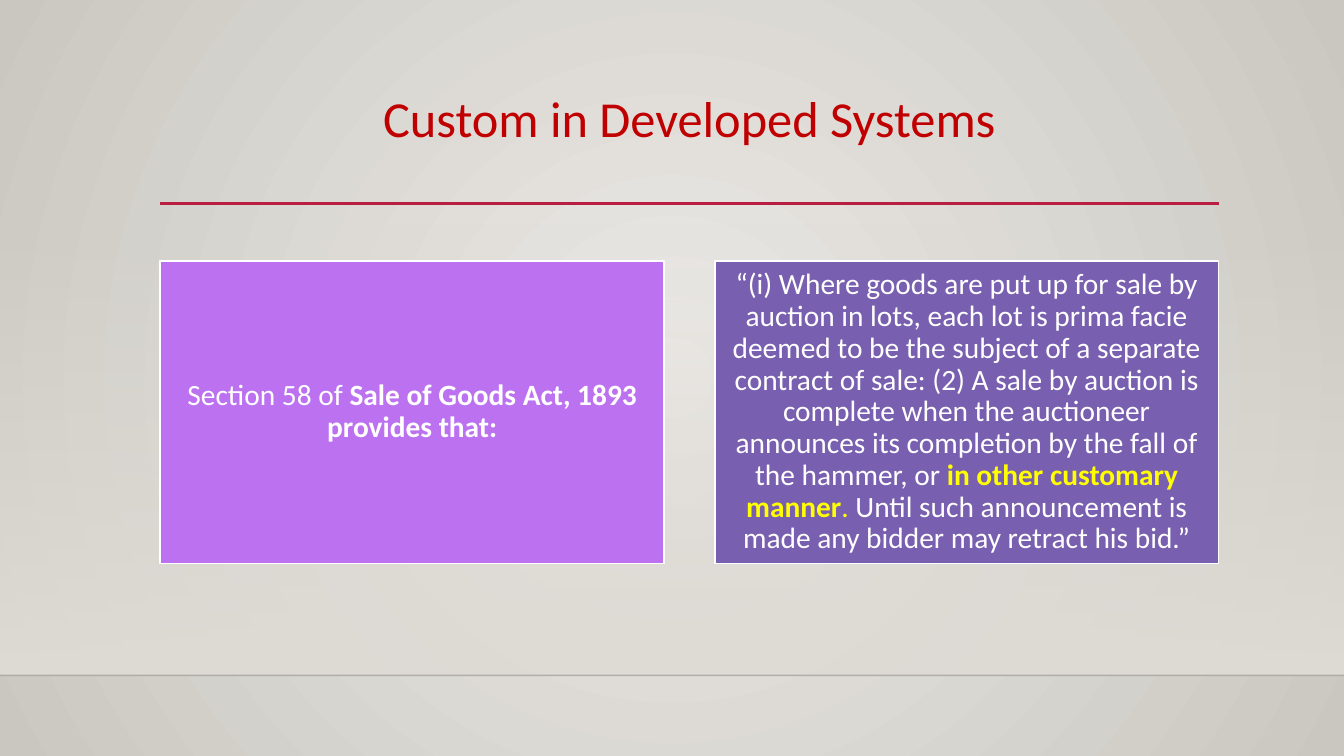
from lxml.etree import SubElement
from pptx import Presentation
from pptx.dml.color import RGBColor
from pptx.enum.shapes import MSO_CONNECTOR, MSO_SHAPE
from pptx.enum.text import MSO_ANCHOR, PP_ALIGN
from pptx.oxml import parse_xml
from pptx.oxml.ns import nsdecls, qn
from pptx.util import Pt

COLORS = {
    "glow": "ECEAE7", "edge": "CAC7C1", "wall": "DFDBD5", "floor": "000001",
    "rule": "B71E42", "title": "C00000", "white": "FFFFFF", "highlight": "FFFF00",
    "statute": "BC72F0", "quotation": "795FAF",
}
WIDTH, HEIGHT = 960, 540
LEFT, CARD_WIDTH, CARD_HEIGHT, CARD_GAP = 114.5, 360, 216, 36
FLOOR_TOP = 482.4

STATUTE = [
    ("Section 58 of ", {}),
    ("Sale of Goods Act, 1893 provides that:", {"bold": True}),
]
QUOTATION = [
    ("“(i) Where goods are put up for sale by auction in lots, each lot is prima facie "
     "deemed to be the subject of a separate contract of sale: (2) A sale by auction is "
     "complete when the auctioneer announces its completion by the fall of the hammer, or ", {}),
    ("in other customary manner", {"color": "highlight", "bold": True}),
    (".", {"color": "highlight"}),
    (" Until such announcement is made any bidder may retract his bid.”", {}),
]


def rgb(name):
    return RGBColor.from_string(COLORS[name])


def set_gradient(fill, element, stops, direction):
    fill.gradient()
    gradient = element.xpath(".//a:gradFill")[0]
    for child in list(gradient):
        gradient.remove(child)
    stop_list = SubElement(gradient, qn("a:gsLst"))
    for position, name, alpha in stops:
        stop = SubElement(stop_list, qn("a:gs"), pos=str(position * 1000))
        color = SubElement(stop, qn("a:srgbClr"), val=COLORS[name])
        SubElement(color, qn("a:alpha"), val=str(alpha * 1000))
    gradient.append(parse_xml(direction))


def add_rule(page, left, top, width, color, weight, alpha=100):
    rule = page.shapes.add_connector(
        MSO_CONNECTOR.STRAIGHT, Pt(left), Pt(top), Pt(left + width), Pt(top))
    rule.line.color.rgb = rgb(color)
    rule.line.width = Pt(weight)
    properties = rule._element.spPr
    SubElement(properties, qn("a:effectLst"))
    if alpha < 100:
        SubElement(properties.xpath(".//a:srgbClr")[0], qn("a:alpha"), val=str(alpha * 1000))


def add_span(para, text, size=21, color="white", bold=False):
    span = para.add_run()
    span.text = text
    span.font.name = "Calibri"
    span.font.size = Pt(size)
    span.font.bold = bold
    span.font.color.rgb = rgb(color)


def center_para(frame, anchor):
    frame.word_wrap = True
    frame.vertical_anchor = anchor
    para = frame.paragraphs[0]
    para.alignment = PP_ALIGN.CENTER
    para.line_spacing = 0.9
    return para


def add_rectangle(page, left, top, width, height):
    box = page.shapes.add_shape(
        MSO_SHAPE.RECTANGLE, Pt(left), Pt(top), Pt(width), Pt(height))
    box.shadow.inherit = False
    return box


def draw_backdrop(page):
    set_gradient(
        page.background.fill, page._element,
        [(0, "glow", 100), (100, "edge", 100)],
        f'<a:path {nsdecls("a")} path="circle">'
        '<a:fillToRect l="50000" t="50000" r="50000" b="50000"/></a:path>')
    wall_top = 159
    wall = add_rectangle(page, 0, wall_top, WIDTH, FLOOR_TOP - wall_top)
    wall.line.fill.background()
    set_gradient(
        wall.fill, wall._element,
        [(0, "wall", 0), (100, "wall", 100)],
        f'<a:lin {nsdecls("a")} ang="5400000" scaled="0"/>')
    add_rule(page, 0, FLOOR_TOP, WIDTH, "floor", 1, alpha=20)


def draw_heading(page, text, left, top, width, height):
    add_rule(page, left, top + height - 0.5, width, "rule", 2.5)
    box = page.shapes.add_textbox(Pt(left), Pt(top), Pt(width), Pt(height))
    para = center_para(box.text_frame, MSO_ANCHOR.TOP)
    add_span(para, text, size=36, color="title")


def draw_card(page, spans, color, left, top, width, height):
    box = add_rectangle(page, left, top, width, height)
    box.fill.solid()
    box.fill.fore_color.rgb = rgb(color)
    box.line.color.rgb = rgb("white")
    box.line.width = Pt(1.25)
    frame = box.text_frame
    frame.margin_left = frame.margin_right = Pt(6.3)
    frame.margin_top = frame.margin_bottom = Pt(6.3)
    para = center_para(frame, MSO_ANCHOR.MIDDLE)
    for text, style in spans:
        add_span(para, text, **style)


def main():
    deck = Presentation()
    deck.slide_width, deck.slide_height = Pt(WIDTH), Pt(HEIGHT)
    page = deck.slides.add_slide(deck.slide_layouts[6])
    draw_backdrop(page)
    draw_heading(page, "Custom in Developed Systems",
                 LEFT, 63.5, 2 * CARD_WIDTH + CARD_GAP, 82.5)
    cards = [(STATUTE, "statute"), (QUOTATION, "quotation")]
    for index, (spans, color) in enumerate(cards):
        draw_card(page, spans, color, LEFT + index * (CARD_WIDTH + CARD_GAP),
                  186.5, CARD_WIDTH, CARD_HEIGHT)
    deck.save("out.pptx")


if __name__ == "__main__":
    main()
